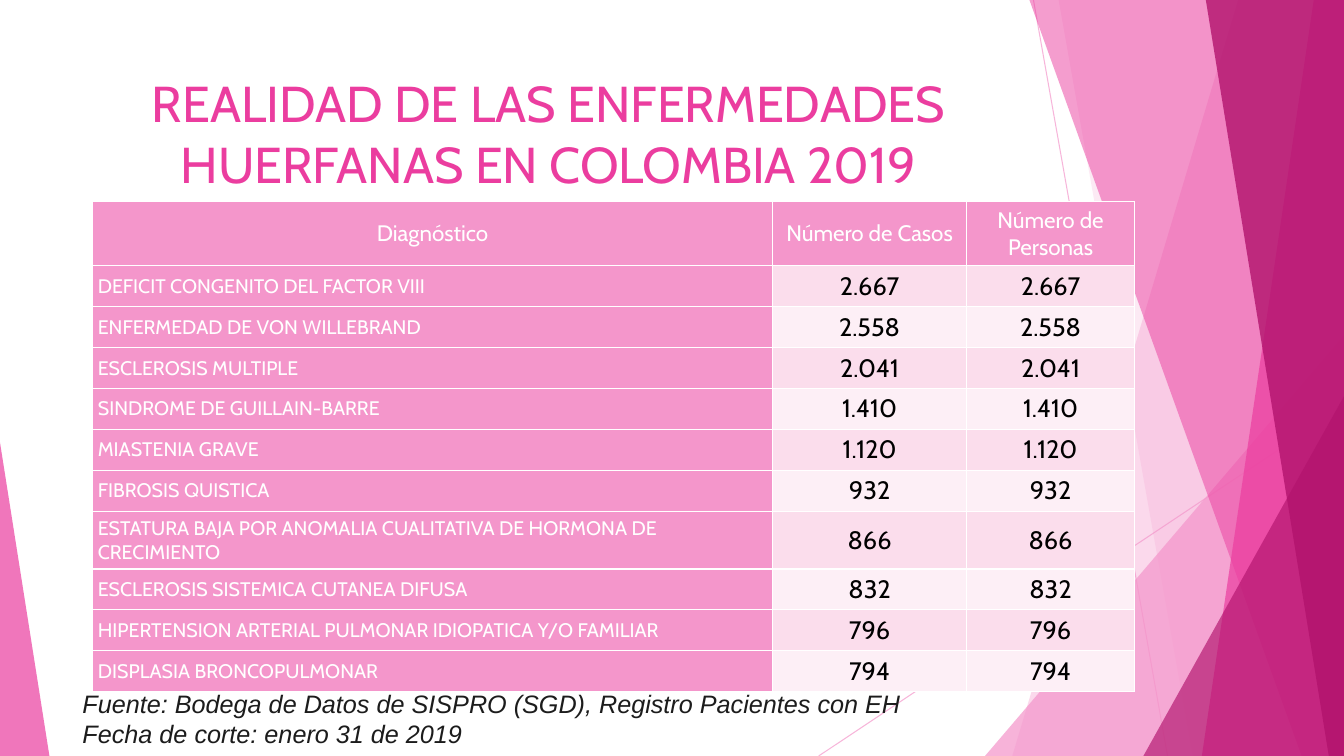
"""Build the slide on orphan diseases in Colombia, 2019."""
from dataclasses import dataclass

from lxml import etree
from pptx import Presentation
from pptx.dml.color import RGBColor
from pptx.enum.shapes import MSO_CONNECTOR, MSO_SHAPE
from pptx.enum.text import MSO_ANCHOR, PP_ALIGN
from pptx.oxml.ns import qn
from pptx.util import Inches, Pt

TRIANGLE = MSO_SHAPE.ISOSCELES_TRIANGLE
STRAIGHT = MSO_CONNECTOR.STRAIGHT
CENTER, LEFT = PP_ALIGN.CENTER, PP_ALIGN.LEFT
MIDDLE, TOP = MSO_ANCHOR.MIDDLE, MSO_ANCHOR.TOP


@dataclass(frozen=True)
class Theme:
    """Colours, fonts and type sizes."""
    white: str = "FFFFFF"
    black: str = "000000"
    ink: str = "1C1C1C"
    light: str = "F496CB"
    pink: str = "EB3D9F"
    dark: str = "B2136D"
    bands: tuple[str, str] = ("FBDDEC", "FDEFF6")
    font: str = "Cabin"
    plain: str = "Arial"
    title: int = 36
    head: int = 16
    label: int = 14
    text: int = 18


@dataclass(frozen=True)
class Ray:
    """A thin line between two points."""
    start: tuple[float, float]
    end: tuple[float, float]


@dataclass(frozen=True)
class Shard:
    """A band from the slide's top to its foot."""
    top: float
    foot: float
    color: str
    alpha: int


@dataclass(frozen=True)
class Corner:
    """A triangle rising from the foot of the slide."""
    left: float
    top: float
    width: float
    peak: int
    color: str
    alpha: int


@dataclass(frozen=True)
class Style:
    """The look of a run of text."""
    size: int
    color: str
    font: str
    italic: bool = False


THEME = Theme()
WIDTH, HEIGHT = 13.33, 7.5
DECOR = (
    Ray((10.25, 0), (11.58, HEIGHT)),
    Ray((WIDTH, 4.03), (8.12, HEIGHT)),
    Shard(12.28, 10.04, THEME.light, 36),
    Shard(10.5, 11.83, THEME.light, 20),
    Corner(9.77, 3.33, 3.56, 1, THEME.light, 72),
    Shard(10.21, 12.91, THEME.pink, 50),
    Shard(13.03, 11.92, THEME.pink, 70),
    Shard(11.96, 13.18, THEME.dark, 80),
    Corner(11.34, 3.93, 1.99, 1, THEME.dark, 66),
    Corner(0, 4.39, 0.49, 0, THEME.pink, 70),
)
HEADS = ("Diagnóstico", "Número de Casos", "Número de Personas")
CASES = (
    ("DEFICIT CONGENITO DEL FACTOR VIII", "2.667"),
    ("ENFERMEDAD DE VON WILLEBRAND", "2.558"),
    ("ESCLEROSIS MULTIPLE", "2.041"),
    ("SINDROME DE GUILLAIN-BARRE", "1.410"),
    ("MIASTENIA GRAVE", "1.120"),
    ("FIBROSIS QUISTICA", "932"),
    ("ESTATURA BAJA POR ANOMALIA CUALITATIVA DE HORMONA DE CRECIMIENTO", "866"),
    ("ESCLEROSIS SISTEMICA CUTANEA DIFUSA", "832"),
    ("HIPERTENSION ARTERIAL PULMONAR IDIOPATICA Y/O FAMILIAR", "796"),
    ("DISPLASIA BRONCOPULMONAR", "794"),
)
COLS = (6.74, 1.93, 1.66)
SOURCE = (
    "Fuente: Bodega de Datos de SISPRO (SGD), Registro Pacientes con EH",
    "Fecha de corte: enero 31 de 2019",
)


def fade(fill, alpha: int) -> None:
    """Set the opacity of a solid colour element."""
    color = fill.find(".//" + qn("a:srgbClr"))
    etree.SubElement(color, qn("a:alpha")).set("val", str(alpha * 1000))


def paint(shape, color: str, alpha: int) -> None:
    """Give a shape a translucent fill and no outline."""
    shape.shadow.inherit = False
    shape.line.fill.background()
    shape.fill.solid()
    shape.fill.fore_color.rgb = RGBColor.from_string(color)
    fade(shape._element.spPr.find(qn("a:solidFill")), alpha)


def draw(shapes, item: Ray | Shard | Corner) -> None:
    """Draw one decorative element."""
    if isinstance(item, Ray):
        ends = [Inches(n) for n in (*item.start, *item.end)]
        line = shapes.add_connector(STRAIGHT, *ends)
        line.line.width = Pt(0.75)
        line.line.color.rgb = RGBColor.from_string(THEME.light)
        props = line._element.spPr
        fade(props.find(qn("a:ln")), 70)
        etree.SubElement(props, qn("a:effectLst"))
        return
    if isinstance(item, Shard):
        form = shapes.build_freeform(Inches(item.top), 0)
        points = ((WIDTH, 0), (WIDTH, HEIGHT), (item.foot, HEIGHT))
        form.add_line_segments([(Inches(x), Inches(y)) for x, y in points])
        shape = form.convert_to_shape()
    else:
        shape = shapes.add_shape(
            TRIANGLE, Inches(item.left), Inches(item.top),
            Inches(item.width), Inches(HEIGHT - item.top))
        shape.adjustments[0] = item.peak
    paint(shape, item.color, item.alpha)


def write(para, text: str, style: Style, align=LEFT) -> None:
    """Add one formatted run to a paragraph."""
    para.alignment = align
    run = para.add_run()
    run.text = text
    font = run.font
    font.size, font.name = Pt(style.size), style.font
    font.bold, font.italic = False, style.italic
    font.color.rgb = RGBColor.from_string(style.color)


def edge(cell) -> None:
    """Draw thin white borders round a cell."""
    props = cell._tc.get_or_add_tcPr()
    for spot, side in enumerate(("lnL", "lnR", "lnT", "lnB")):
        line = etree.Element(qn("a:" + side), w=str(Pt(1)))
        fill = etree.SubElement(line, qn("a:solidFill"))
        etree.SubElement(fill, qn("a:srgbClr"), val=THEME.white)
        props.insert(spot, line)


def fill_cell(cell, text: str, style: Style, color: str, align) -> None:
    """Write and format one table cell."""
    cell.vertical_anchor = MIDDLE
    cell.margin_left = cell.margin_right = Inches(0.05)
    cell.margin_top = cell.margin_bottom = Inches(0.05)
    cell.fill.solid()
    cell.fill.fore_color.rgb = RGBColor.from_string(color)
    edge(cell)
    write(cell.text_frame.paragraphs[0], text, style, align)


def add_grid(shapes) -> None:
    """Add the table of diagnoses."""
    table = shapes.add_table(
        len(CASES) + 1, len(COLS), Inches(0.92), Inches(2),
        Inches(sum(COLS)), Inches(4.63)).table
    for col, width in zip(table.columns, COLS):
        col.width = Inches(width)
    for row in table.rows:
        row.height = Inches(0.4)
    table.rows[0].height = Inches(0.63)
    head = Style(THEME.head, THEME.white, THEME.font)
    label = Style(THEME.label, THEME.white, THEME.font)
    value = Style(THEME.text, THEME.black, THEME.font)
    for col, text in enumerate(HEADS):
        fill_cell(table.cell(0, col), text, head, THEME.light, CENTER)
    for row, (name, count) in enumerate(CASES, 1):
        fill_cell(table.cell(row, 0), name, label, THEME.light, LEFT)
        band = THEME.bands[(row - 1) % 2]
        for col in (1, 2):
            fill_cell(table.cell(row, col), count, value, band, CENTER)


def main() -> None:
    """Build and save the slide."""
    deck = Presentation()
    deck.slide_width, deck.slide_height = Inches(WIDTH), Inches(HEIGHT)
    slide = deck.slides.add_slide(deck.slide_layouts[5])
    shapes = slide.shapes
    for item in DECOR:
        draw(shapes, item)

    title = shapes.title
    title.left, title.top = Inches(0.74), Inches(0.67)
    title.width, title.height = Inches(9.4), Inches(1.44)
    title.text_frame.vertical_anchor = TOP
    write(title.text_frame.paragraphs[0],
          "REALIDAD DE LAS ENFERMEDADES HUERFANAS EN COLOMBIA 2019",
          Style(THEME.title, THEME.pink, THEME.font), CENTER)
    add_grid(shapes)

    frame = shapes.add_textbox(
        Inches(0.72), Inches(6.78), Inches(8.4), Inches(0.71)).text_frame
    frame.word_wrap = True
    note = Style(THEME.text, THEME.ink, THEME.plain, True)
    write(frame.paragraphs[0], SOURCE[0], note)
    write(frame.add_paragraph(), SOURCE[1], note)
    deck.save("out.pptx")


if __name__ == "__main__":
    main()
